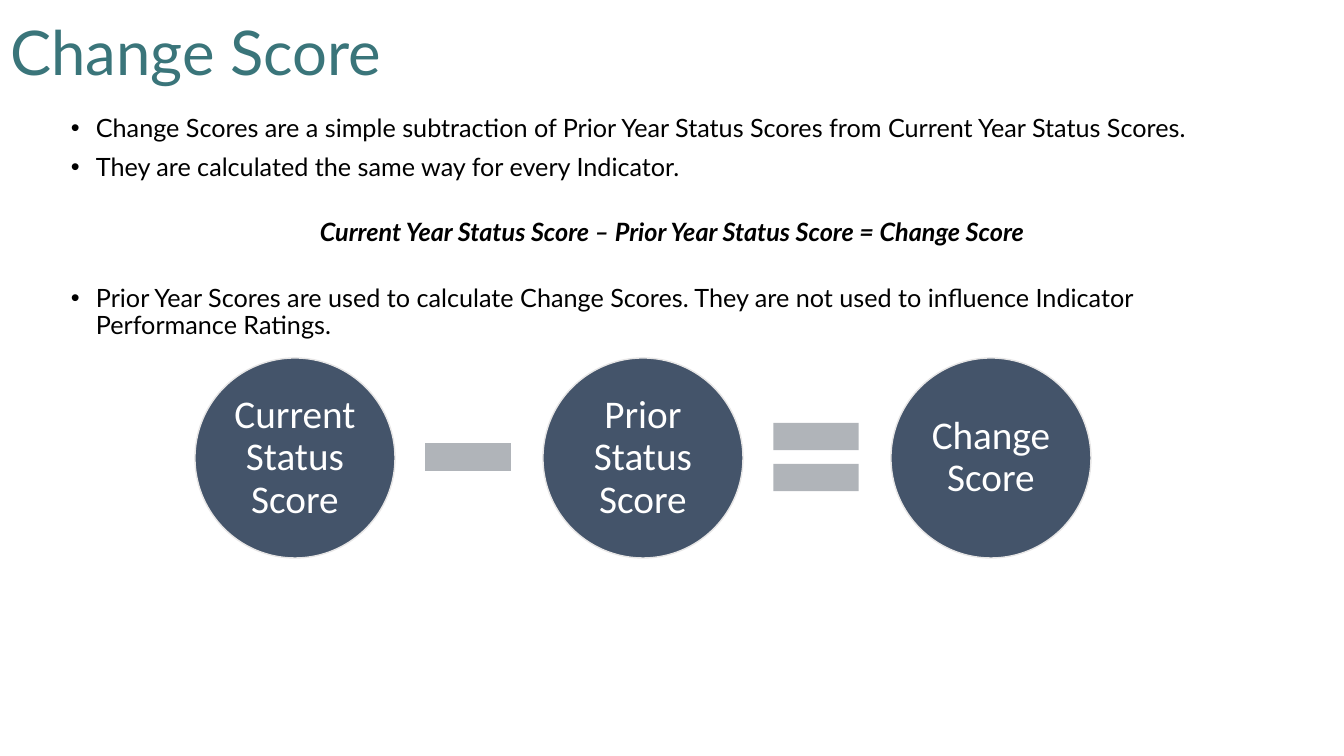
from dataclasses import dataclass

from lxml import etree
from pptx import Presentation
from pptx.dml.color import RGBColor
from pptx.enum.shapes import MSO_SHAPE
from pptx.enum.text import MSO_ANCHOR, MSO_AUTO_SIZE, PP_ALIGN
from pptx.oxml.ns import qn
from pptx.util import Pt

LEFT, CENTER = PP_ALIGN.LEFT, PP_ALIGN.CENTER
BOTTOM, MIDDLE = MSO_ANCHOR.BOTTOM, MSO_ANCHOR.MIDDLE
NO_AUTOFIT = MSO_AUTO_SIZE.NONE
CIRCLE, MINUS, EQUAL = MSO_SHAPE.OVAL, MSO_SHAPE.MATH_MINUS, MSO_SHAPE.MATH_EQUAL
EMU_PER_PX = 914400 / 100.8


@dataclass(frozen=True)
class Theme:
    teal: RGBColor = RGBColor.from_string("3A757A")
    black: RGBColor = RGBColor.from_string("000000")
    white: RGBColor = RGBColor.from_string("FFFFFF")
    navy: RGBColor = RGBColor.from_string("44546A")
    outline: RGBColor = RGBColor.from_string("E7E6E6")
    gray: RGBColor = RGBColor.from_string("B0B4B9")
    text_font: str = "Lato"
    circle_font: str = "Calibri"
    title_size: int = 44
    body_size: int = 18
    circle_size: int = 28


theme = Theme()


def px(length):
    return round(length * EMU_PER_PX)


def style(paragraph, font_name, size, color, alignment):
    paragraph.alignment = alignment
    paragraph.line_spacing = 0.9
    paragraph.font.name = font_name
    paragraph.font.size = Pt(size)
    paragraph.font.color.rgb = color


deck = Presentation()
deck.slide_width, deck.slide_height = px(1344), px(756)
page = deck.slides.add_slide(deck.slide_layouts[5])

# Title
title = page.shapes.title
title.left, title.top, title.width, title.height = px(0), px(-16), px(1164), px(110)
title.text_frame.text = "Change Score"
title.text_frame.vertical_anchor = BOTTOM
title.text_frame.auto_size = NO_AUTOFIT
style(title.text_frame.paragraphs[0], theme.text_font, theme.title_size, theme.teal, LEFT)

# Explanation: text, space before in points, is it the formula
explanation = [
    ("Change Scores are a simple subtraction of Prior Year Status Scores "
     "from Current Year Status Scores.", 8, False),
    ("They are calculated the same way for every Indicator.", 8, False),
    ("Current Year Status Score – Prior Year Status Score = Change Score", 27.5, True),
    ("Prior Year Scores are used to calculate Change Scores. They are not used "
     "to influence Indicator Performance Ratings.", 27.5, False),
]
body = page.shapes.add_textbox(px(61), px(111), px(1222), px(240)).text_frame
body.word_wrap = True
for index, (text, space_before, is_formula) in enumerate(explanation):
    para = body.add_paragraph() if index else body.paragraphs[0]
    para.text = text
    style(para, theme.text_font, theme.body_size, theme.black, CENTER if is_formula else LEFT)
    para.space_before = Pt(space_before)
    if is_formula:
        para.font.bold = para.font.italic = True
    else:
        # Bullet elements go before the paragraph's default font
        properties = para.font._element.getparent()
        properties.set("marL", str(px(25)))
        properties.set("indent", str(-px(25)))
        bullet_font = etree.Element(qn("a:buFont"), typeface="Arial")
        bullet = etree.Element(qn("a:buChar"), char="•")
        para.font._element.addprevious(bullet_font)
        para.font._element.addprevious(bullet)

# Equation: each circle is followed by its operator
equation = [
    ("Current Status Score", MINUS),
    ("Prior Status Score", EQUAL),
    ("Change Score", None),
]
for index, (label, operator) in enumerate(equation):
    left = 195 + 348 * index
    circle = page.shapes.add_shape(CIRCLE, px(left), px(358), px(200), px(200))
    circle.shadow.inherit = False
    circle.fill.solid()
    circle.fill.fore_color.rgb = theme.navy
    circle.line.color.rgb = theme.outline
    circle.line.width = Pt(1)
    frame = circle.text_frame
    frame.text = label
    frame.word_wrap = True
    frame.vertical_anchor = MIDDLE
    frame.margin_left = frame.margin_right = frame.margin_top = frame.margin_bottom = px(4)
    style(frame.paragraphs[0], theme.circle_font, theme.circle_size, theme.white, CENTER)
    if operator is not None:
        sign = page.shapes.add_shape(operator, px(left + 215), px(399), px(116), px(116))
        sign.shadow.inherit = False
        sign.fill.solid()
        sign.fill.fore_color.rgb = theme.gray
        sign.line.fill.background()

deck.save("out.pptx")
